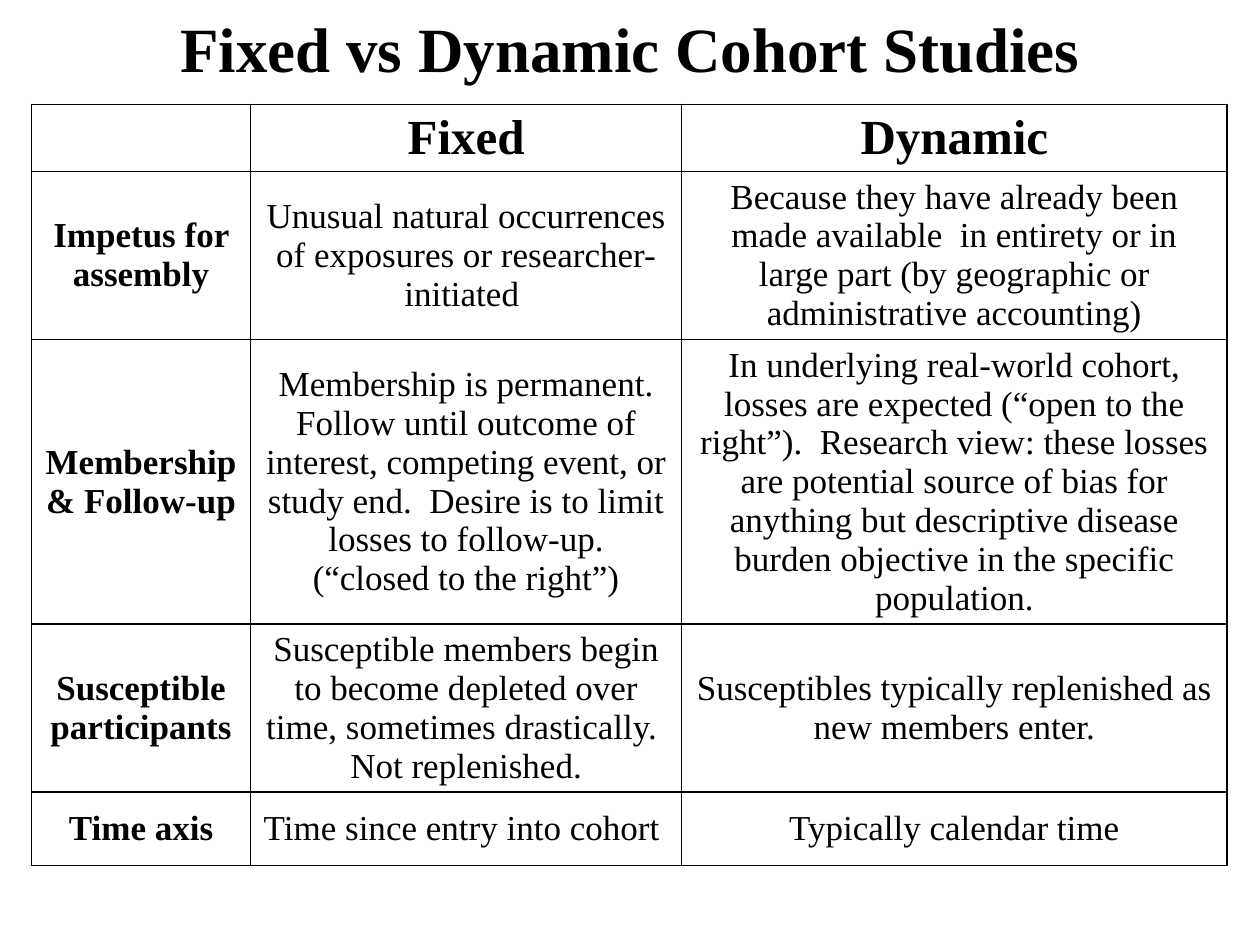
from dataclasses import dataclass

from lxml.etree import SubElement
from pptx import Presentation
from pptx.dml.color import RGBColor
from pptx.enum.text import MSO_ANCHOR as Anchor, PP_ALIGN as Align
from pptx.oxml.ns import qn
from pptx.util import Inches, Pt


@dataclass(frozen=True)
class Theme:
    font: str = "Times New Roman"
    ink: str = "000000"
    title: int = 36
    header: int = 28
    body: int = 20
    border: int = 1


THEME = Theme()
COLS = (1.74, 3.42, 4.33)
ROWS = (0.53, 1.33, 2.26, 1.33, 0.58)
CELLS = (
    ("", "Fixed", "Dynamic"),
    ("Impetus for assembly",
     "Unusual natural occurrences of exposures or researcher-initiated ",
     "Because they have already been made available  in entirety or in large part "
     "(by geographic or administrative accounting)"),
    ("Membership & Follow-up",
     "Membership is permanent. Follow until outcome of interest, competing event, or "
     "study end.  Desire is to limit losses to follow-up.\n(“closed to the right”)",
     "In underlying real-world cohort, losses are expected (“open to the right”).  "
     "Research view: these losses are potential source of bias for anything but "
     "descriptive disease burden objective in the specific population."),
    ("Susceptible participants",
     "Susceptible members begin to become depleted over time, sometimes drastically.  "
     "Not replenished.",
     "Susceptibles typically replenished as new members enter."),
    ("Time axis", "Time since entry into cohort ", "Typically calendar time"),
)


def write(tf, text, size, bold):
    """Fill a text frame with centred paragraphs in the theme font."""
    tf.text = text
    tf.word_wrap = True
    style = {"name": THEME.font, "size": Pt(size), "bold": bold}
    for p in tf.paragraphs:
        p.alignment = Align.CENTER
        for r in p.runs:
            for name, value in style.items():
                setattr(r.font, name, value)
            r.font.color.rgb = RGBColor.from_string(THEME.ink)


def add_borders(cell):
    """Draw all four sides of a cell; lines must precede its fill."""
    props = cell._tc.get_or_add_tcPr()
    for side in ("a:lnL", "a:lnR", "a:lnT", "a:lnB"):
        line = SubElement(props, qn(side), w=str(Pt(THEME.border)))
        fill = SubElement(line, qn("a:solidFill"))
        SubElement(fill, qn("a:srgbClr"), val=THEME.ink)


def place_title(slide, box, text):
    sp = slide.shapes.title
    sp.left, sp.top, sp.width, sp.height = box
    write(sp.text_frame, text, THEME.title, True)
    sp.text_frame.vertical_anchor = Anchor.MIDDLE


def place_table(slide, box):
    table = slide.shapes.add_table(len(ROWS), len(COLS), *box).table
    table.first_row = table.horz_banding = False
    left, top, width, height = box
    for col, share in zip(table.columns, COLS):
        col.width = int(width * share / sum(COLS))
    for row, share in zip(table.rows, ROWS):
        row.height = int(height * share / sum(ROWS))
    for i, texts in enumerate(CELLS):
        for j, text in enumerate(texts):
            cell = table.cell(i, j)
            header = i == 0
            write(cell.text_frame, text, THEME.header if header else THEME.body,
                  header or j == 0)
            cell.vertical_anchor = Anchor.TOP if header else Anchor.MIDDLE
            add_borders(cell)
            cell.fill.background()


def main():
    prs = Presentation()
    prs.slide_width, prs.slide_height = Inches(10), Inches(7.5)
    slide = prs.slides.add_slide(prs.slide_layouts[5])
    # Title band, centred over the table
    place_title(slide, [Inches(v) for v in (0.75, -0.25, 8.5, 1.25)],
                "Fixed vs Dynamic Cohort Studies")
    # Comparison table
    place_table(slide, [Inches(v) for v in (0.25, 0.83, sum(COLS), sum(ROWS))])
    prs.save("out.pptx")


if __name__ == "__main__":
    main()
